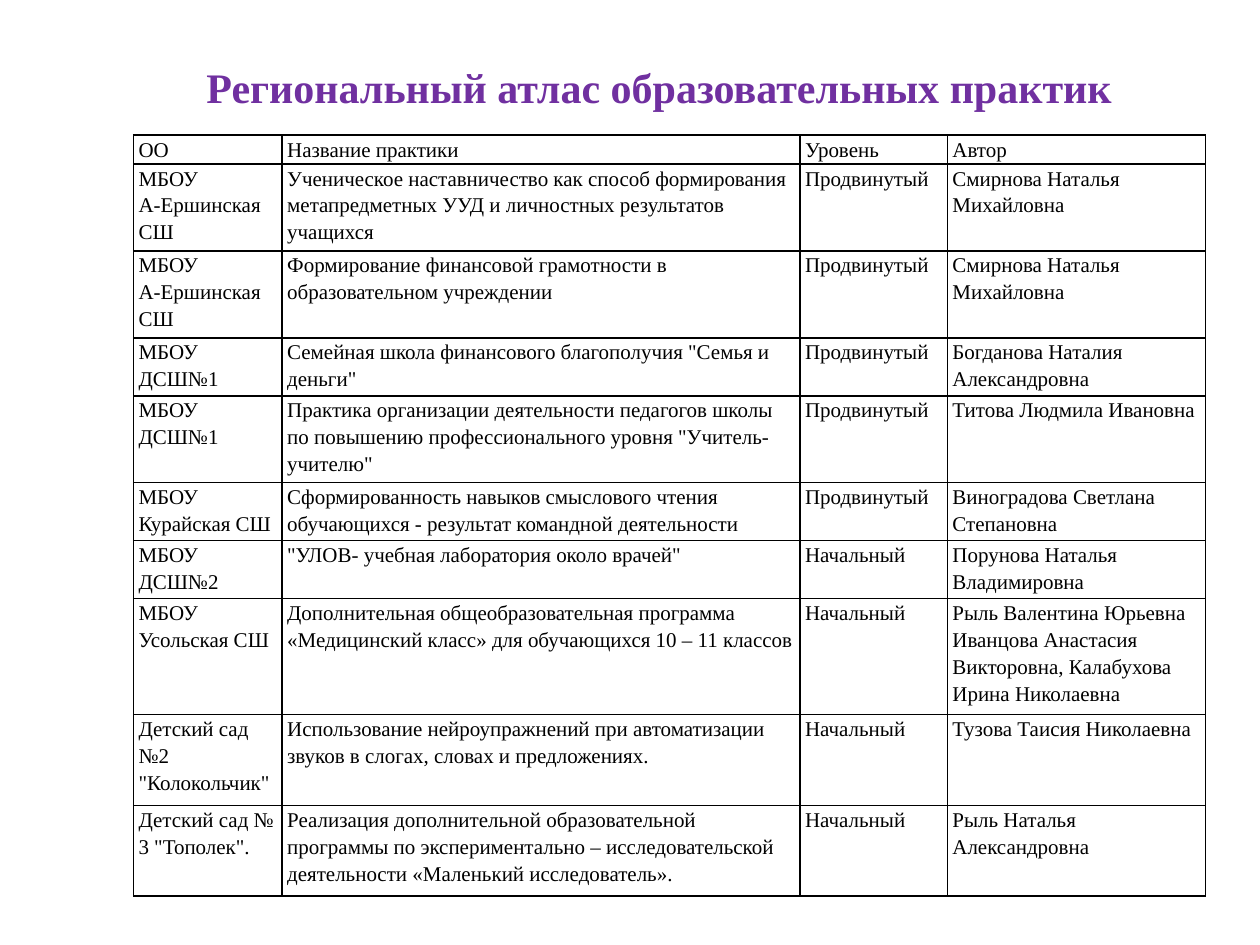
from lxml import etree
from pptx import Presentation
from pptx.dml.color import RGBColor
from pptx.enum import text
from pptx.oxml import ns
from pptx.util import Inches, Pt

FONT = "Times New Roman"
PURPLE = RGBColor(0x70, 0x30, 0xA0)
BLACK = RGBColor(0, 0, 0)

TITLE = "Региональный атлас образовательных практик"
ADVANCED = "Продвинутый"
BASIC = "Начальный"
ROWS = [
    ("ОО", "Название практики", "Уровень", "Автор"),
    ("МБОУ\nА-Ершинская СШ",
     "Ученическое наставничество как способ формирования метапредметных УУД и личностных результатов учащихся",
     ADVANCED, "Смирнова Наталья Михайловна"),
    ("МБОУ\nА-Ершинская СШ",
     "Формирование финансовой грамотности в образовательном учреждении",
     ADVANCED, "Смирнова Наталья Михайловна"),
    ("МБОУ ДСШ№1",
     'Семейная школа финансового благополучия "Семья и деньги"',
     ADVANCED, "Богданова Наталия Александровна"),
    ("МБОУ ДСШ№1",
     'Практика организации деятельности педагогов школы по повышению профессионального уровня "Учитель-учителю"',
     ADVANCED, "Титова Людмила Ивановна"),
    ("МБОУ Курайская СШ",
     "Сформированность навыков смыслового чтения обучающихся - результат командной деятельности",
     ADVANCED, "Виноградова Светлана Степановна"),
    ("МБОУ ДСШ№2",
     '"УЛОВ- учебная лаборатория около врачей"',
     BASIC, "Порунова Наталья Владимировна"),
    ("МБОУ Усольская СШ",
     "Дополнительная общеобразовательная программа «Медицинский класс» для обучающихся 10 – 11 классов",
     BASIC, "Рыль Валентина Юрьевна\nИванцова Анастасия Викторовна, Калабухова Ирина Николаевна"),
    ('Детский сад №2 "Колокольчик"',
     "Использование нейроупражнений при автоматизации звуков в слогах, словах и предложениях.",
     BASIC, "Тузова Таисия Николаевна"),
    ('Детский сад № 3 "Тополек".',
     "Реализация дополнительной образовательной программы по экспериментально – исследовательской деятельности «Маленький исследователь».",
     BASIC, "Рыль Наталья Александровна"),
]
COLUMN_WIDTHS = [1.18, 4.11, 1.17, 2.05]
ROW_HEIGHTS = [0.23, 0.69, 0.69, 0.46, 0.69, 0.46, 0.46, 0.92, 0.72, 0.72]


def add_run(paragraph, wording, size, color, bold=False):
    run = paragraph.add_run()
    run.text = wording
    run.font.name = FONT
    run.font.size = Pt(size)
    run.font.bold = bold
    run.font.color.rgb = color


def add_borders(cell):
    properties = cell._tc.get_or_add_tcPr()
    for side in ("a:lnL", "a:lnR", "a:lnT", "a:lnB"):
        line = etree.SubElement(properties, ns.qn(side), w=str(Pt(1)))
        fill = etree.SubElement(line, ns.qn("a:solidFill"))
        etree.SubElement(fill, ns.qn("a:srgbClr"), val=str(BLACK))


def fill_cell(cell, wording):
    cell.margin_left = cell.margin_right = Inches(0.04)
    cell.margin_top = cell.margin_bottom = 0
    frame = cell.text_frame
    for index, line in enumerate(wording.split("\n")):
        paragraph = frame.add_paragraph() if index else frame.paragraphs[0]
        paragraph.line_spacing = 1.15
        add_run(paragraph, line, 12, BLACK)
    add_borders(cell)
    cell.fill.background()


presentation = Presentation()
presentation.slide_width = Inches(10)
presentation.slide_height = Inches(7.5)
slide = presentation.slides.add_slide(presentation.slide_layouts[6])

title = slide.shapes.add_textbox(Inches(1.54), Inches(0.44), Inches(7.46), Inches(0.5))
title.text_frame.word_wrap = False
title.text_frame.auto_size = text.MSO_AUTO_SIZE.SHAPE_TO_FIT_TEXT
add_run(title.text_frame.paragraphs[0], TITLE, 24, PURPLE, bold=True)

table = slide.shapes.add_table(
    len(ROWS), len(COLUMN_WIDTHS), Inches(1.06), Inches(1.07),
    Inches(sum(COLUMN_WIDTHS)), Inches(sum(ROW_HEIGHTS))).table
table.first_row = table.horz_banding = False
for column, width in zip(table.columns, COLUMN_WIDTHS):
    column.width = Inches(width)
for row, height, wordings in zip(table.rows, ROW_HEIGHTS, ROWS):
    row.height = Inches(height)
    for cell, wording in zip(row.cells, wordings):
        fill_cell(cell, wording)

presentation.save("out.pptx")
